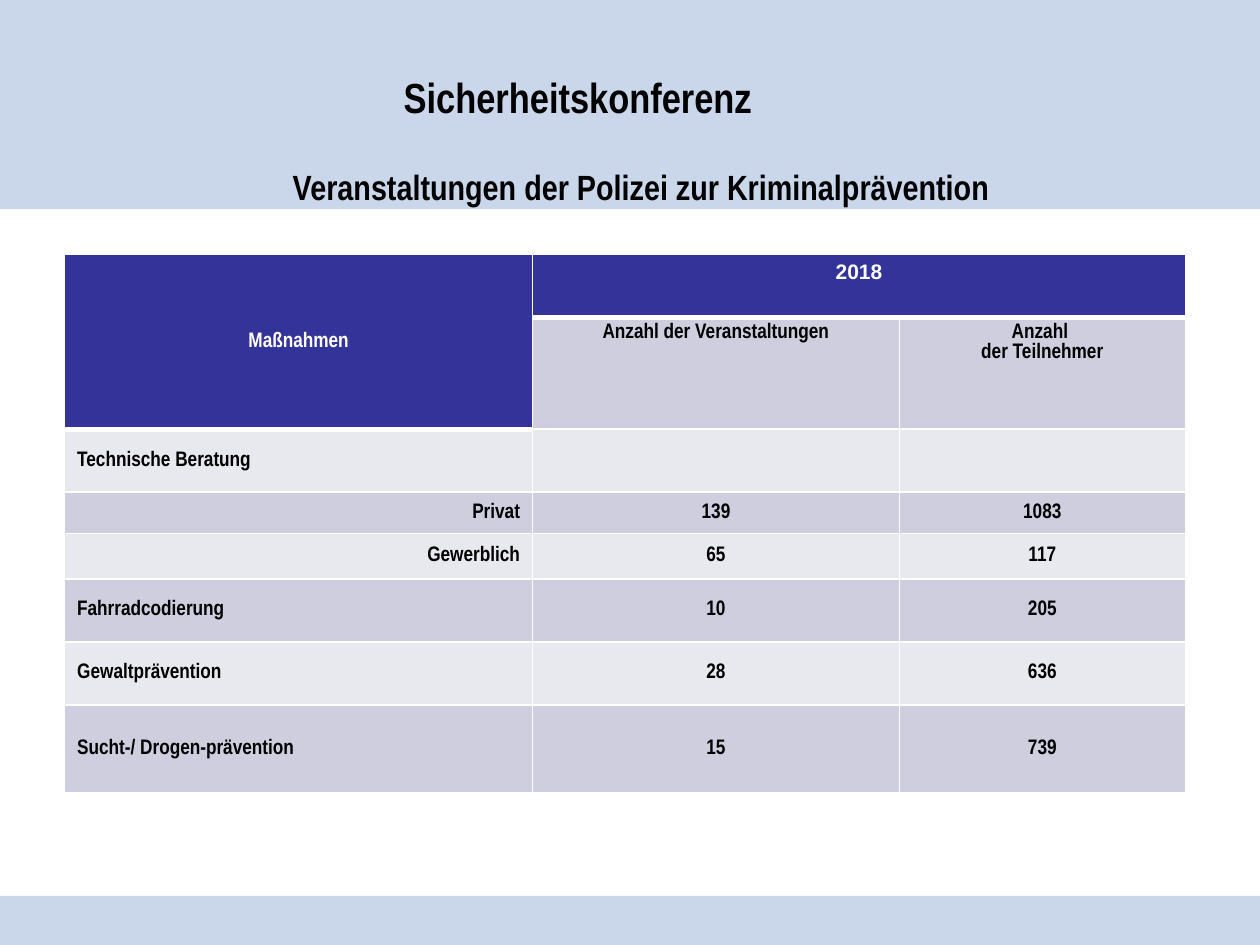
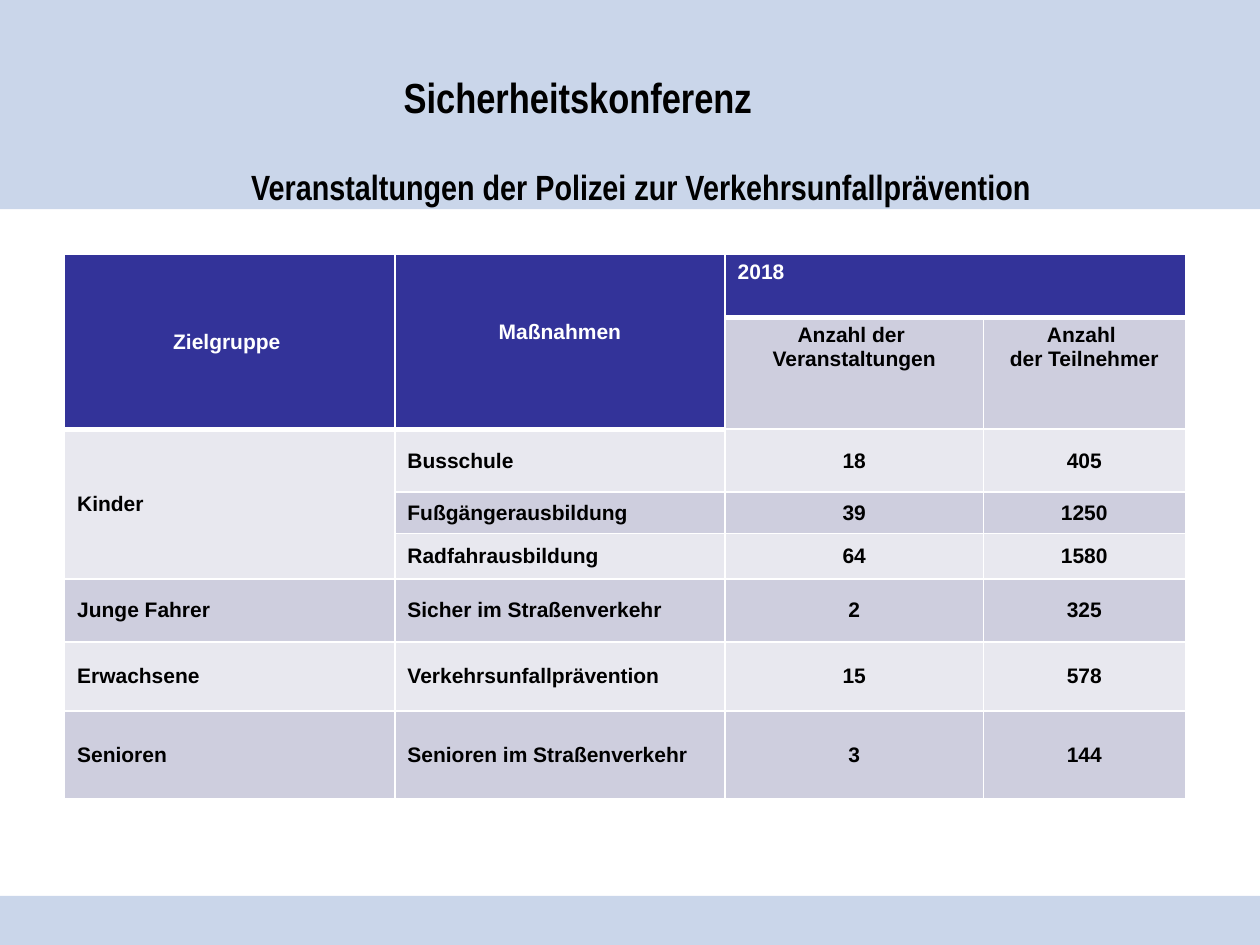
from lxml.etree import SubElement
from pptx import Presentation
from pptx.dml.color import RGBColor
from pptx.enum.shapes import MSO_SHAPE as Preset
from pptx.enum.text import MSO_ANCHOR as Anchor, MSO_AUTO_SIZE as AutoSize, PP_ALIGN as Align
from pptx.oxml.ns import qn
from pptx.util import Pt

COLORS = {
    "band": "2E5DAD",
    "header": "333399",
    "odd_row": "CECEDE",
    "even_row": "E8E8EF",
    "white": "FFFFFF",
    "black": "000000",
}
NARROW, REGULAR = "Arial Narrow", "Arial"
PAGE_WIDTH, PAGE_HEIGHT = 720, 540
THIN, THICK = 1, 3


def color(name):
    return RGBColor.from_string(COLORS[name])


class ConferenceDeck:
    def __init__(self):
        self.deck = Presentation()
        self.deck.slide_width, self.deck.slide_height = Pt(PAGE_WIDTH), Pt(PAGE_HEIGHT)
        self.page = None

    def add_page(self, title):
        self.page = self.deck.slides.add_slide(self.deck.slide_layouts[5])
        self.add_band(0, 119.5)
        self.add_band(512, 28)
        self.set_title(title)

    def add_band(self, top, height):
        """Draw a translucent full-width band behind everything else."""
        band = self.page.shapes.add_shape(
            Preset.RECTANGLE, 0, Pt(top), Pt(PAGE_WIDTH), Pt(height))
        band.shadow.inherit = False
        band.fill.solid()
        band.fill.fore_color.rgb = color("band")
        tint = band._element.spPr.find(qn("a:solidFill"))[0]
        SubElement(tint, qn("a:alpha"), val="25000")
        band.line.fill.background()
        self.page.shapes._spTree.insert(2, band._element)

    def set_title(self, text):
        title = self.page.shapes.title
        title.left, title.top, title.width, title.height = Pt(8.64), Pt(94.3), Pt(720), Pt(28)
        frame = title.text_frame
        frame.auto_size = AutoSize.NONE
        frame.vertical_anchor = Anchor.BOTTOM
        self.add_text(frame, text, 20)

    def add_conference_name(self):
        box = self.page.shapes.add_textbox(Pt(211), Pt(37.5), Pt(238.3), Pt(36))
        frame = box.text_frame
        frame.word_wrap = True
        frame.auto_size = AutoSize.SHAPE_TO_FIT_TEXT
        self.add_text(frame, "Sicherheitskonferenz", 24)

    def add_text(self, frame, text, size, face=NARROW, ink="black", align=Align.CENTER):
        """Fill a text frame with bold text, one paragraph per line."""
        for index, line in enumerate(text.split("\n")):
            para = frame.add_paragraph() if index else frame.paragraphs[0]
            para.alignment = align
            span = para.add_run()
            span.text = line
            span.font.size, span.font.bold, span.font.name = Pt(size), True, face
            span.font.color.rgb = color(ink)

    def paint_cell(self, cell, fill, top, bottom):
        properties = cell._tc.get_or_add_tcPr()
        for side, width in (("L", THIN), ("R", THIN), ("T", top), ("B", bottom)):
            border = SubElement(properties, qn(f"a:ln{side}"), w=str(Pt(width)))
            paint = SubElement(border, qn("a:solidFill"))
            SubElement(paint, qn("a:srgbClr"), val=COLORS["white"])
        cell.fill.solid()
        cell.fill.fore_color.rgb = color(fill)

    def add_table(self, rows, widths, heights, merges, face, aligns):
        """Add a table; aligns holds exceptions to left labels and centred values."""
        table = self.page.shapes.add_table(
            len(rows), len(widths), Pt(36.9), Pt(145.3),
            Pt(sum(widths)), Pt(sum(heights))).table
        table.first_row = table.horz_banding = False
        for column, width in zip(table.columns, widths):
            column.width = Pt(width)
        for row, height in zip(table.rows, heights):
            row.height = Pt(height)
        for first, last in merges:
            table.cell(*first).merge(table.cell(*last))

        label_columns = len(widths) - 2
        for r, texts in enumerate(rows):
            for c, text in enumerate(texts):
                cell = table.cell(r, c)
                is_header = r == 0 or (r == 1 and c < label_columns)
                below_header = (r == 1 and c >= label_columns) or (r == 2 and c < label_columns)
                band = "odd_row" if r % 2 else "even_row"
                self.paint_cell(cell, "header" if is_header else band,
                                THICK if below_header else THIN,
                                THICK if is_header else THIN)
                is_top = r < 2 and c >= label_columns
                cell.vertical_anchor = Anchor.TOP if is_top else Anchor.MIDDLE
                if text:
                    is_label = r > 1 and c < label_columns
                    align = aligns.get((r, c), Align.LEFT if is_label else Align.CENTER)
                    self.add_text(cell.text_frame, text, 12,
                                  REGULAR if text == "2018" else face,
                                  "white" if is_header else "black", align)
        return table


def main():
    talk = ConferenceDeck()
    heights = [36, 64, 36, 23.5, 26, 36, 36, 50]

    talk.add_page("Veranstaltungen der Polizei zur Kriminalprävention ")
    talk.add_table(
        [
            ["Maßnahmen", "2018", ""],
            ["", "Anzahl der Veranstaltungen", "Anzahl \nder Teilnehmer"],
            ["Technische Beratung", "", ""],
            ["Privat", "139", "1083"],
            ["Gewerblich", "65", "117"],
            ["Fahrradcodierung", "10", "205"],
            ["Gewaltprävention", "28", "636"],
            ["Sucht-/ Drogen-prävention", "15", "739"],
        ],
        widths=[267.5, 209.5, 163.5],
        heights=heights,
        merges=[((0, 0), (1, 0)), ((0, 1), (0, 2))],
        face=NARROW,
        aligns={(3, 0): Align.RIGHT, (4, 0): Align.RIGHT},
    )
    talk.add_conference_name()

    talk.add_page("Veranstaltungen der Polizei zur Verkehrsunfallprävention ")
    heights[6] = 39.5
    table = talk.add_table(
        [
            ["Zielgruppe ", "Maßnahmen", "2018", ""],
            ["", "", "Anzahl der \nVeranstaltungen", "Anzahl \nder Teilnehmer"],
            ["Kinder", "Busschule", "18", "405"],
            ["", "Fußgängerausbildung", "39", "1250"],
            ["", "Radfahrausbildung", "64", "1580"],
            ["Junge Fahrer", "Sicher im Straßenverkehr", "2", "325"],
            ["Erwachsene", "Verkehrsunfallprävention", "15", "578"],
            ["Senioren", "Senioren im Straßenverkehr", "3", "144"],
        ],
        widths=[188.75, 188.75, 147.5, 115.5],
        heights=heights,
        merges=[((0, 0), (1, 0)), ((0, 1), (1, 1)), ((0, 2), (0, 3)), ((2, 0), (4, 0))],
        face=REGULAR,
        aligns={(0, 2): Align.LEFT},
    )
    table.cell(0, 1).margin_bottom = Pt(15)
    talk.add_conference_name()

    talk.deck.save("out.pptx")


if __name__ == "__main__":
    main()
